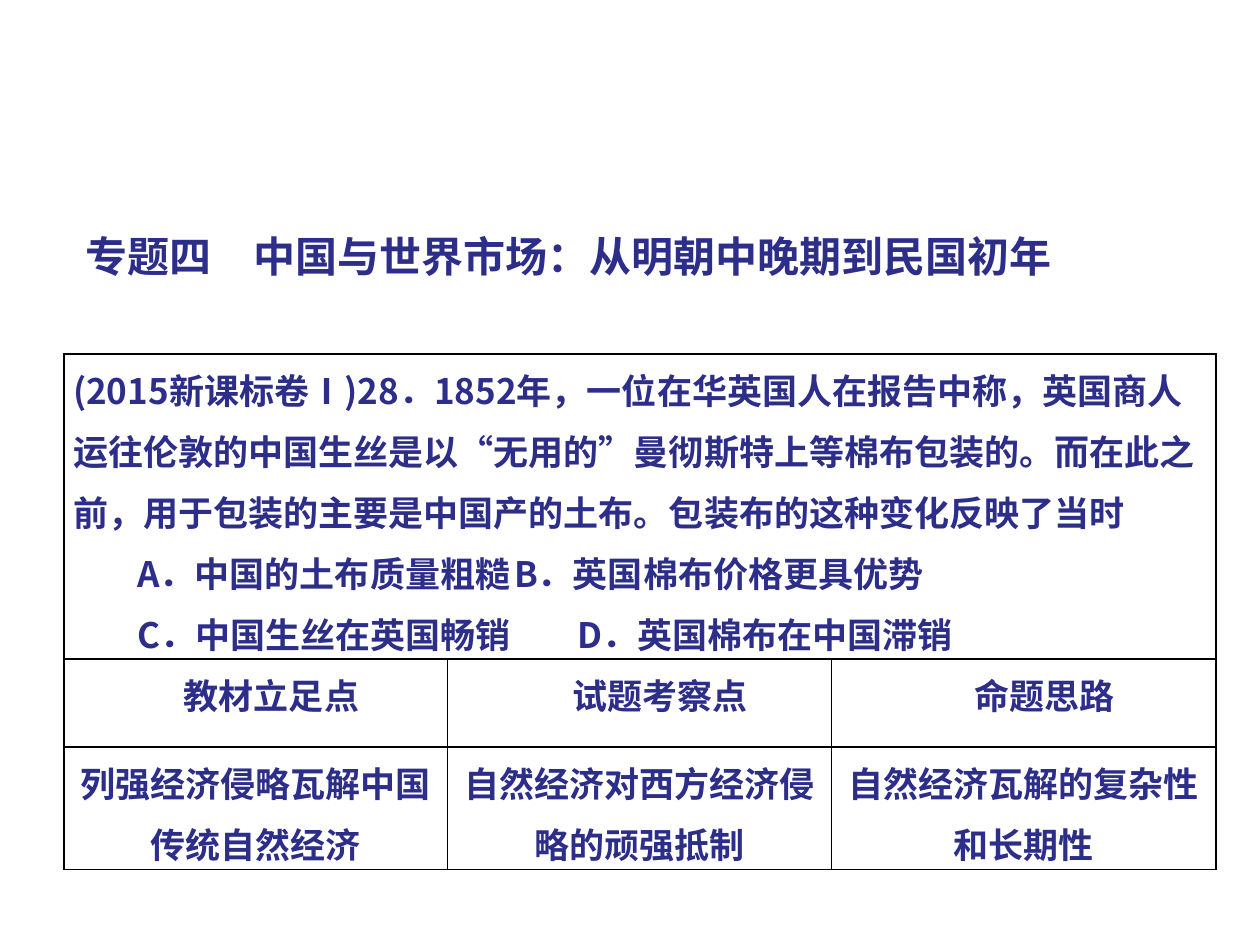
from lxml import etree
from pptx import Presentation
from pptx.dml.color import RGBColor
from pptx.enum.text import MSO_ANCHOR, PP_ALIGN
from pptx.oxml.ns import qn
from pptx.util import Inches, Pt

NAVY = RGBColor(0x2D, 0x2D, 0x8A)
BLACK = RGBColor(0, 0, 0)
CJK_FONT = "Noto Sans CJK SC"

TITLE = [("专题四　中国与世界市场", CJK_FONT), ("：从明朝中晚期到民国初年", "Arial")]
QUESTION = ("(2015新课标卷Ⅰ)28．1852年，一位在华英国人在报告中称，英国商人运往伦敦的"
            "中国生丝是以“无用的”曼彻斯特上等棉布包装的。而在此之前，用于包装的主要是"
            "中国产的土布。包装布的这种变化反映了当时")
# Second options start on the default one-inch tab stops
OPTIONS = ["A．中国的土布质量粗糙\tB．英国棉布价格更具优势",
           "C．中国生丝在英国畅销\t\tD．英国棉布在中国滞销"]
HEADINGS = [("教材立足点", 0.25), ("试题考察点", 0.33), ("命题思路", 0.33)]
ANSWERS = ["列强经济侵略瓦解中国传统自然经济",
           "自然经济对西方经济侵略的顽强抵制",
           "自然经济瓦解的复杂性和长期性"]


def write_text(paragraph, text, font=CJK_FONT, size=20, align=PP_ALIGN.LEFT,
               indent=0, spacing=None):
    """Add a run to the paragraph and set the paragraph's format."""
    run = paragraph.add_run()
    run.text = text
    run.font.name, run.font.size, run.font.bold = font, Pt(size), True
    run.font.color.rgb = NAVY
    east_asian = etree.SubElement(run.font._element, qn("a:ea"))
    east_asian.set("typeface", CJK_FONT)

    paragraph.alignment = align
    if spacing:
        paragraph.line_spacing = spacing
    properties = paragraph._p.get_or_add_pPr()
    properties.set("marL", "0")
    properties.set("indent", str(Inches(indent)))


class SlideBuilder:
    def __init__(self, slide, line_spacing=1.2, border_width=1):
        self.slide = slide
        self.line_spacing = line_spacing
        self.border_width = border_width

    def title(self, runs, left, top, width, height):
        box = self.slide.shapes.add_textbox(
            Inches(left), Inches(top), Inches(width), Inches(height))
        box.text_frame.word_wrap = True
        for text, font in runs:
            write_text(box.text_frame.paragraphs[0], text, font=font,
                       size=24, indent=0.31)

    def table(self, left, top, columns, rows):
        shape = self.slide.shapes.add_table(
            len(rows), len(columns), Inches(left), Inches(top),
            Inches(sum(columns)), Inches(sum(rows)))
        table = shape.table
        table.first_row = table.horz_banding = False
        for column, width in zip(table.columns, columns):
            column.width = Inches(width)
        for row, height in zip(table.rows, rows):
            row.height = Inches(height)
            for cell in row.cells:
                self.format_cell(cell)
        return table

    def format_cell(self, cell):
        cell.margin_left = cell.margin_right = Inches(0.07)
        cell.margin_top = cell.margin_bottom = 0
        cell.vertical_anchor = MSO_ANCHOR.TOP
        properties = cell._tc.get_or_add_tcPr()
        for side in ("lnL", "lnR", "lnT", "lnB"):
            line = etree.SubElement(properties, qn(f"a:{side}"),
                                    w=str(Pt(self.border_width)))
            fill = etree.SubElement(line, qn("a:solidFill"))
            etree.SubElement(fill, qn("a:srgbClr"), val=str(BLACK))
        cell.fill.background()

    def cell_text(self, cell, text, **text_format):
        paragraph = cell.text_frame.paragraphs[0]
        if paragraph.runs:
            paragraph = cell.text_frame.add_paragraph()
        write_text(paragraph, text, spacing=self.line_spacing, **text_format)


def main():
    presentation = Presentation()
    presentation.slide_width, presentation.slide_height = Inches(10), Inches(7.5)
    slide = presentation.slides.add_slide(presentation.slide_layouts[6])
    builder = SlideBuilder(slide)

    builder.title(TITLE, 0.27, 1.78, 9.73, 0.74)
    table = builder.table(0.51, 2.81, columns=[3.04, 3.05, 3.05], rows=[2.42, 0.7, 0.97])

    # Question with its options across the full width
    question_cell = table.cell(0, 0)
    question_cell.merge(table.cell(0, 2))
    builder.cell_text(question_cell, QUESTION)
    for text in OPTIONS:
        builder.cell_text(question_cell, text, indent=0.51)

    # Analysis columns
    for column, ((heading, indent), answer) in enumerate(zip(HEADINGS, ANSWERS)):
        builder.cell_text(table.cell(1, column), heading,
                          align=PP_ALIGN.CENTER, indent=indent)
        builder.cell_text(table.cell(2, column), answer, align=PP_ALIGN.CENTER)

    presentation.save("out.pptx")


if __name__ == "__main__":
    main()
